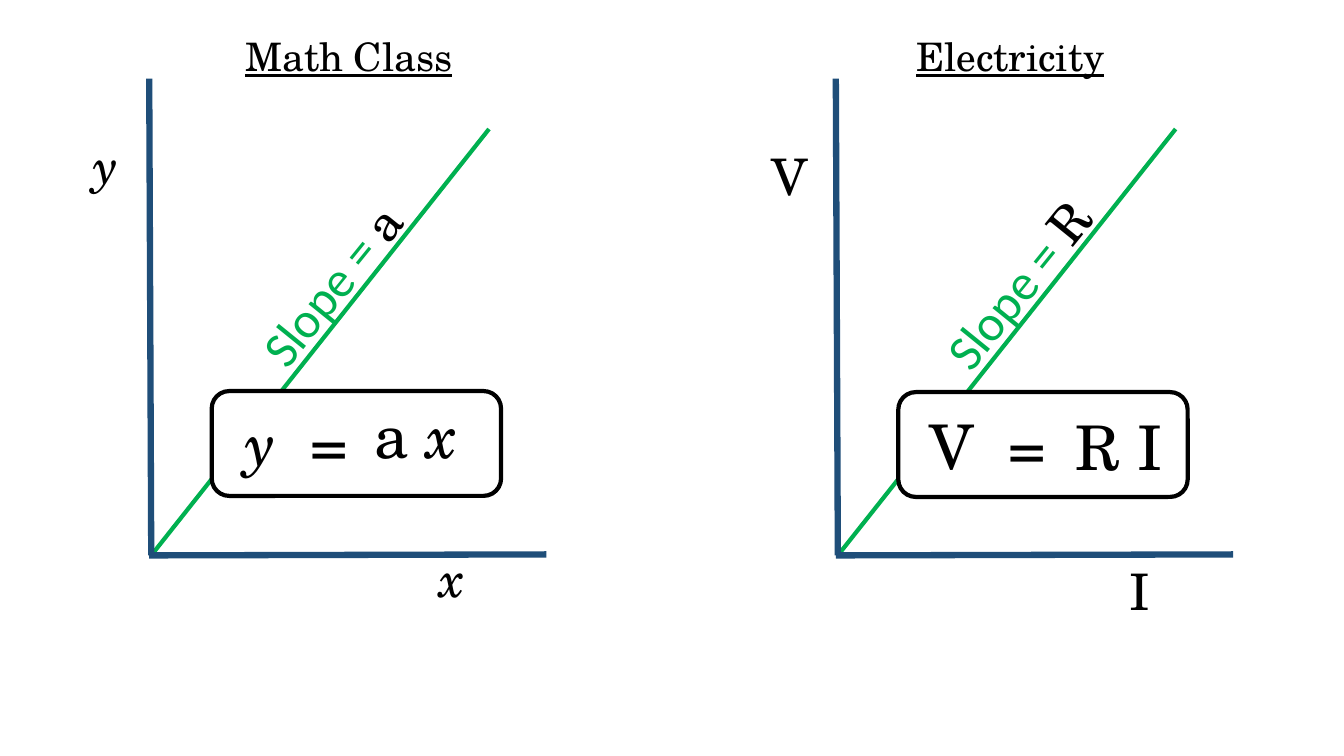
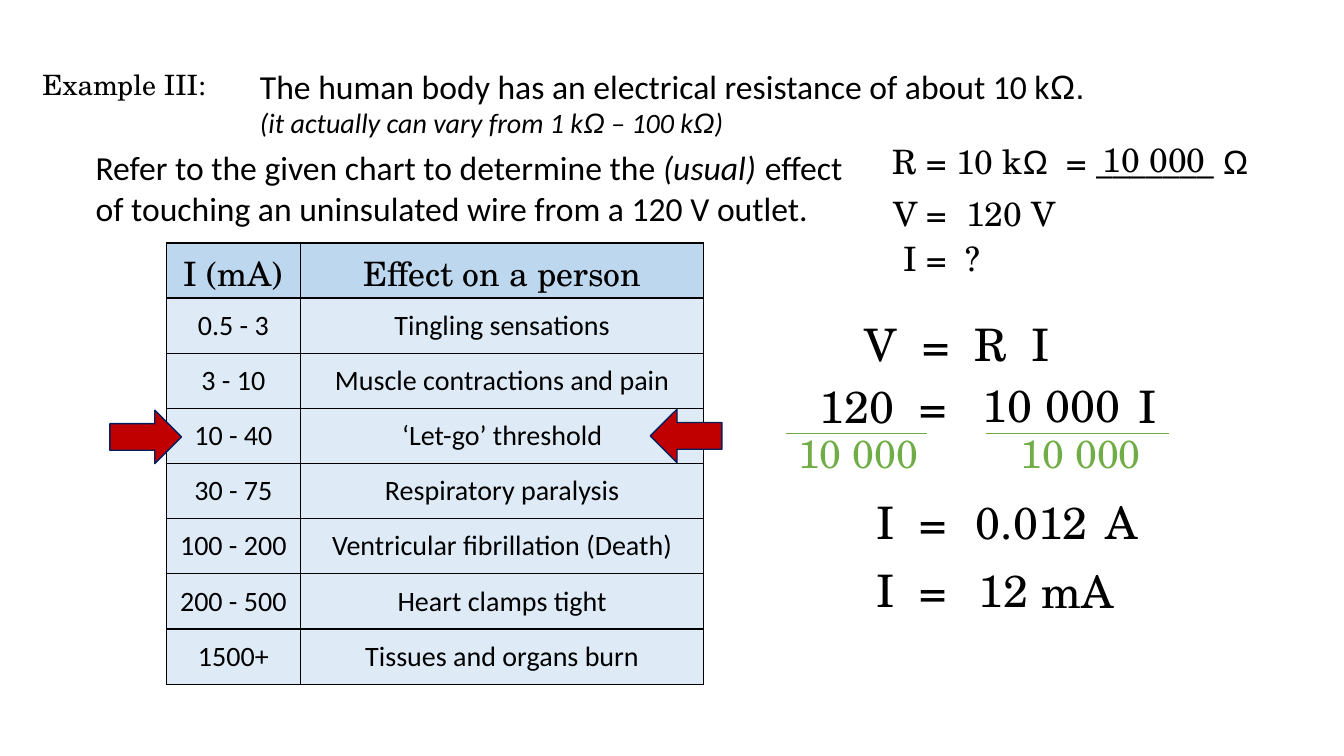
"""Build two slides on Ohm's law: a graph comparison and a worked example."""
from lxml import etree
from pptx import Presentation, util as u
from pptx.dml.color import RGBColor
from pptx.enum import shapes, text
from pptx.oxml.ns import qn

COLORS = {
    "black": "000000", "white": "FFFFFF", "slope": "00B050", "axis": "1F4E79",
    "divisor": "70AD47", "header": "BDD7EE", "body": "DEEBF7",
    "arrow": "C00000", "arrow_edge": "002060",
}
SERIF, SANS, SYMBOL = "TeX Gyre Schola", "Calibri", "Arial"
CENTER, LEFT = text.PP_ALIGN.CENTER, text.PP_ALIGN.LEFT
ITALIC = {"italic": True}
ASIDE = {"size": 20, "italic": True}
OHM = ("Ω", {"font": SYMBOL})
ASIDE_OHM = ("Ω", {"font": SYMBOL, **ASIDE})

GRAPH_STEP = 6.81
GRAPHS = [
    {
        "heading": ("Math Class", (2.02, 0.27, 2.88, 0.57)),
        "slope": "a",
        "box_top": 3.88,
        "labels": [
            ([("x", ITALIC)], 36, (4.02, 5.38, 0.93, 0.71)),
            ([("y", ITALIC)], 36, (0.59, 1.28, 0.93, 0.71)),
            ([("y", ITALIC), "  ="], 44, (2.15, 3.97, 1.58, 0.84)),
            (["a ", ("x", ITALIC)], 44, (3.51, 3.89, 1.23, 0.84)),
        ],
    },
    {
        "heading": ("Electricity", (8.57, 0.27, 2.9, 0.57)),
        "slope": "R",
        "box_top": 3.89,
        "labels": [
            (["I"], 36, (10.84, 5.51, 0.93, 0.71)),
            (["V"], 36, (7.37, 1.39, 0.93, 0.71)),
            (["V  ="], 44, (8.95, 4, 1.69, 0.84)),
            (["R I"], 44, (10.33, 4.01, 1.54, 0.84)),
        ],
    },
]

RESISTANCE = [
    "The human body has an electrical resistance of about 10 k",
    ("Ω. ", {"font": SYMBOL}),
    ("(it actually can vary from 1 k", ASIDE), ASIDE_OHM,
    (" – 100 k", ASIDE), ASIDE_OHM, (")", ASIDE),
]
QUESTION = [
    "Refer to the given chart to determine the ", ("(usual)", ITALIC),
    (" ", {"size": 28}),
    "effect of touching an uninsulated wire from a 120 V outlet.",
]
GIVENS = [
    (["I =  ?"], (8.44, 2.31, 1.81, 0.5), CENTER),
    (["V =  120 V"], (8.62, 1.86, 2.09, 0.5), CENTER),
    (["R = 10 k", OHM], (8.66, 1.35, 1.93, 0.5), CENTER),
    (["= _______ ", OHM], (10.48, 1.35, 2.46, 0.5), LEFT),
    (["10 000"], (10.84, 1.33, 1.25, 0.5), LEFT),
]
SOLUTION = [
    ("V  =  R  I", 7.82, 3.09, 3.35),
    ("120  =", 7.82, 3.71, 1.88),
    ("10 000", 9.46, 3.7, 1.94),
    ("I", 11.11, 3.71, 0.54),
    ("I  =", 8.36, 4.86, 1.37),
    ("0.012", 9.55, 4.86, 1.37),
    ("A", 10.57, 4.86, 1.11),
    ("I  =", 8.36, 5.53, 1.37),
    ("12", 9.43, 5.53, 1.05),
    ("mA", 10.13, 5.54, 1.11),
]
DIVISORS = [(9.78, 11.59, 9.63, 2.18), (7.8, 9.19, 7.68, 1.66)]
EFFECTS = [
    ("I (mA)", "Effect on a person"),
    ("0.5 - 3", "Tingling sensations"),
    ("3 - 10", "Muscle contractions and pain"),
    ("10 - 40", "‘Let-go’ threshold"),
    ("30 - 75", "Respiratory paralysis"),
    ("100 - 200", "Ventricular fibrillation (Death)"),
    ("200 - 500", "Heart clamps tight"),
    ("1500+", "Tissues and organs burn"),
]
COLUMN_WIDTHS = (1.33, 4)
TABLE_FRAME = (1.65, 2.41, 5.33, 4.38)
ARROWS = [
    (shapes.MSO_SHAPE.RIGHT_ARROW, (1.09, 4.07, 0.71, 0.53)),
    (shapes.MSO_SHAPE.LEFT_ARROW, (6.45, 4.06, 0.71, 0.53)),
]


def color(name):
    return RGBColor.from_string(COLORS[name])


def inches(values):
    return [u.Inches(value) for value in values]


def write(paragraph, runs, size, font=SERIF, fill="black", align=CENTER):
    paragraph.alignment = align
    for item in runs:
        content, style = (item, {}) if isinstance(item, str) else item
        run = paragraph.add_run()
        run.text = content
        run.font.name = style.get("font", font)
        run.font.size = u.Pt(style.get("size", size))
        run.font.italic = style.get("italic")
        run.font.underline = style.get("underline")
        run.font.color.rgb = color(style.get("fill", fill))


def add_text(slide, frame, runs, size, **style):
    box = slide.shapes.add_textbox(*inches(frame))
    box.text_frame.word_wrap = True
    box.text_frame.auto_size = text.MSO_AUTO_SIZE.SHAPE_TO_FIT_TEXT
    write(box.text_frame.paragraphs[0], runs, size, **style)
    return box


def add_line(slide, start, end, stroke, width):
    line = slide.shapes.add_connector(
        shapes.MSO_CONNECTOR.STRAIGHT, *inches(start + end))
    line.line.color.rgb = color(stroke)
    line.line.width = u.Pt(width)
    etree.SubElement(line._element.spPr, qn("a:effectLst"))


def add_shape(slide, kind, frame, fill, stroke, width):
    shape = slide.shapes.add_shape(kind, *inches(frame))
    shape.shadow.inherit = False
    shape.fill.solid()
    shape.fill.fore_color.rgb = color(fill)
    shape.line.color.rgb = color(stroke)
    shape.line.width = u.Pt(width)


def add_graph(slide, graph, shift):
    origin = (1.5 + shift, 5.51)
    add_line(slide, origin, (4.85 + shift, 1.28), "slope", 3)
    slope = add_text(
        slide, (1.6 + shift, 2.47, 3.37, 0.71),
        [("Slope = ", {"font": SANS, "fill": "slope"}), graph["slope"]], 36)
    slope.rotation = 308.9
    add_line(slide, (1.48 + shift, 5.51), (5.42 + shift, 5.5), "axis", 4.5)
    add_line(slide, origin, (1.48 + shift, 0.78), "axis", 4.5)
    heading, frame = graph["heading"]
    add_text(slide, frame, [(heading, {"underline": True})], 28)
    add_shape(slide, shapes.MSO_SHAPE.ROUNDED_RECTANGLE,
              (2.1 + shift, graph["box_top"], 2.87, 1.04), "white", "black", 3)
    for runs, size, frame in graph["labels"]:
        add_text(slide, frame, runs, size)


def add_borders(cell):
    properties = cell._tc.get_or_add_tcPr()
    for index, side in enumerate(("lnL", "lnR", "lnT", "lnB")):
        border = etree.Element(qn(f"a:{side}"), w=str(u.Pt(1)))
        fill = etree.SubElement(border, qn("a:solidFill"))
        etree.SubElement(fill, qn("a:srgbClr"), val=COLORS["black"])
        properties.insert(index, border)


def add_effects_table(slide):
    table = slide.shapes.add_table(
        len(EFFECTS), len(COLUMN_WIDTHS), *inches(TABLE_FRAME)).table
    table.first_row = table.horz_banding = False
    for column, width in zip(table.columns, COLUMN_WIDTHS):
        column.width = u.Inches(width)
    for row, values in enumerate(EFFECTS):
        size, font, fill = (20, SANS, "body") if row else (24, SERIF, "header")
        for column, value in enumerate(values):
            cell = table.cell(row, column)
            cell.vertical_anchor = text.MSO_ANCHOR.MIDDLE
            cell.fill.solid()
            cell.fill.fore_color.rgb = color(fill)
            add_borders(cell)
            write(cell.text_frame.paragraphs[0], [value], size, font)


def build_graphs(presentation):
    slide = presentation.slides.add_slide(presentation.slide_layouts[6])
    for index, graph in enumerate(GRAPHS):
        add_graph(slide, graph, index * GRAPH_STEP)


def build_example(presentation):
    slide = presentation.slides.add_slide(presentation.slide_layouts[5])
    title = slide.shapes.title
    title.left, title.top, title.width, title.height = inches(
        (0.32, 0.62, 2.25, 0.44))
    title.text_frame.vertical_anchor = text.MSO_ANCHOR.TOP
    title.text_frame.auto_size = text.MSO_AUTO_SIZE.NONE
    write(title.text_frame.paragraphs[0], ["Example III:"], 20, align=LEFT)
    add_text(slide, (2.48, 0.6, 8.42, 0.84), RESISTANCE, 24,
             font=SANS, align=LEFT)
    add_text(slide, (0.85, 1.35, 7.7, 0.98), QUESTION, 24,
             font=SANS, align=LEFT)
    for runs, frame, align in GIVENS:
        add_text(slide, frame, runs, 24, align=align)
    add_effects_table(slide)
    for content, left, top, width in SOLUTION:
        add_text(slide, (left, top, width, 0.64), [content], 32)
    for start, end, left, width in DIVISORS:
        add_line(slide, (start, 4.3), (end, 4.3), "divisor", 0.5)
        add_text(slide, (left, 4.21, width, 0.57), ["10 000"], 28,
                 fill="divisor")
    for kind, frame in ARROWS:
        add_shape(slide, kind, frame, "arrow", "arrow_edge", 1)


def main():
    presentation = Presentation()
    presentation.slide_width = u.Inches(13.33)
    presentation.slide_height = u.Inches(7.5)
    build_graphs(presentation)
    build_example(presentation)
    presentation.save("out.pptx")


if __name__ == "__main__":
    main()
